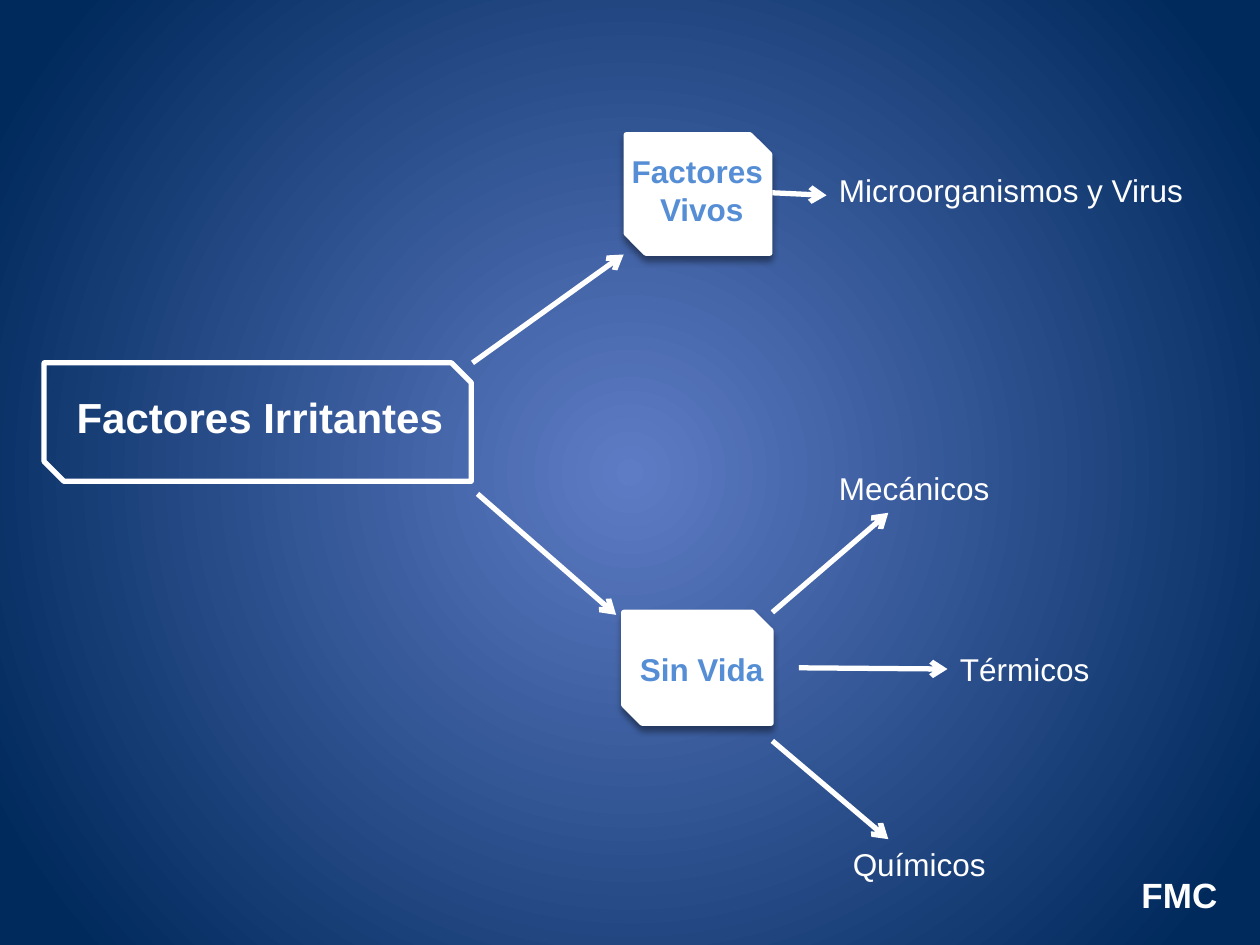
import pptx
import pptx.dml.color
import pptx.enum.shapes
import pptx.enum.text
import pptx.oxml
import pptx.oxml.ns
import pptx.util

PX = 9144
WHITE = pptx.dml.color.RGBColor(0xFF, 0xFF, 0xFF)
SKY = pptx.dml.color.RGBColor(0x55, 0x8E, 0xD5)
GLOW = pptx.dml.color.RGBColor(0x5E, 0x7C, 0xC5)
NAVY = pptx.dml.color.RGBColor(0x00, 0x29, 0x5C)
ALIGN = pptx.enum.text.PP_ALIGN
ANCHOR = pptx.enum.text.MSO_ANCHOR
qn = pptx.oxml.ns.qn


def px(*values):
    return [v * PX for v in values]


def xml(tag, inner="", **attrs):
    attr_text = "".join(f' {k}="{v}"' for k, v in attrs.items())
    ns = pptx.oxml.ns.nsdecls("a")
    return pptx.oxml.parse_xml(f"<a:{tag} {ns}{attr_text}>{inner}</a:{tag}>")


def add_background(s):
    fill = s.background.fill
    fill.gradient()
    for stop, color, position in zip(fill.gradient_stops, (GLOW, NAVY), (0, 0.92)):
        stop.color.rgb = color
        stop.position = position
    grad = s.element.find(".//" + qn("a:gradFill"))
    grad.replace(grad.find(qn("a:lin")), xml(
        "path", '<a:fillToRect l="50000" t="50000" r="50000" b="50000"/>', path="circle"))


def add_text(s, box, text, size=18, color=WHITE, bold=False,
             align=ALIGN.LEFT, wrap=False, anchor=ANCHOR.TOP):
    tf = s.shapes.add_textbox(*px(*box)).text_frame
    tf.text = text
    tf.word_wrap = wrap
    tf.vertical_anchor = anchor
    if not wrap:
        tf.auto_size = pptx.enum.text.MSO_AUTO_SIZE.SHAPE_TO_FIT_TEXT
    for p in tf.paragraphs:
        p.alignment = align
        for r in p.runs:
            r.font.name = "Arial"
            r.font.size = pptx.util.Pt(size)
            r.font.bold = bold
            r.font.color.rgb = color


def add_card(s, box, filled=True):
    sp = s.shapes.add_shape(
        pptx.enum.shapes.MSO_SHAPE.SNIP_2_DIAG_RECTANGLE, *px(*box))
    sp.shadow.inherit = False
    sp.line.color.rgb = WHITE
    sp.line.width = pptx.util.Pt(3)
    if not filled:
        sp.fill.background()
        return
    sp.fill.solid()
    sp.fill.fore_color.rgb = WHITE
    sp.element.spPr.find(qn("a:effectLst")).append(xml(
        "outerShdw", '<a:srgbClr val="000000"><a:alpha val="40000"/></a:srgbClr>',
        blurRad=pptx.util.Pt(4), dist=pptx.util.Pt(3), dir=90 * 60000, rotWithShape=0))


def add_arrow(s, x, y, dx, dy):
    cxn = s.shapes.add_connector(
        pptx.enum.shapes.MSO_CONNECTOR.STRAIGHT, *px(x, y, x + dx, y + dy))
    cxn.line.color.rgb = WHITE
    cxn.line.width = pptx.util.Pt(3)
    cxn.line._get_or_add_ln().append(xml("tailEnd", type="arrow"))
    cxn.element.spPr.append(xml("effectLst"))


def add_root(s, x, y, w, h):
    add_card(s, (x, y, w, h), filled=False)
    add_text(s, (x + 16, y + 18, 314, 50), "Factores Irritantes", 24, bold=True)
    add_arrow(s, x + w + 1, y, 120, -86)
    add_arrow(s, x + w + 5, y + h + 10, 110, 96)


def add_living(s, x, y, w, h):
    add_card(s, (x, y, w, h))
    add_text(s, (x - 6, y + 9, 125, 71), "Factores\n Vivos",
             color=SKY, bold=True, align=ALIGN.CENTER)
    add_arrow(s, x + w + 2, y + 46, 43, 2)
    add_text(s, (x + w + 45, y + 24, 296, 40), "Microorganismos y Virus")


def add_lifeless(s, x, y, w, h):
    add_card(s, (x, y, w, h))
    add_text(s, (x + 3, y + 25, 120, 40), "Sin Vida", color=SKY, bold=True)
    right = x + w
    causes = [
        ("Mecánicos", (44, -119, 141), (1, 0, 92, -79)),
        ("Térmicos", (140, 25, 124), (22, 44, 118, 1)),
        ("Químicos", (55, 180, 127), (1, 102, 92, 78)),
    ]
    for text, (tx, ty, tw), (ax, ay, dx, dy) in causes:
        add_text(s, (right + tx, y + ty, tw, 40), text)
        add_arrow(s, right + ax, y + ay, dx, dy)


def add_footer(s, x, y, w, h):
    add_text(s, (x, y, w, h), "FMC", 20, bold=True,
             align=ALIGN.RIGHT, wrap=True, anchor=ANCHOR.MIDDLE)


def main():
    prs = pptx.Presentation()
    prs.slide_width, prs.slide_height = px(1000, 750)
    s = prs.slides.add_slide(prs.slide_layouts[6])
    add_background(s)
    add_root(s, 35, 288, 339, 94)
    add_living(s, 497, 107, 114, 94)
    add_lifeless(s, 495, 486, 117, 88)
    add_footer(s, 889, 690, 87, 40)
    prs.save("out.pptx")


if __name__ == "__main__":
    main()
